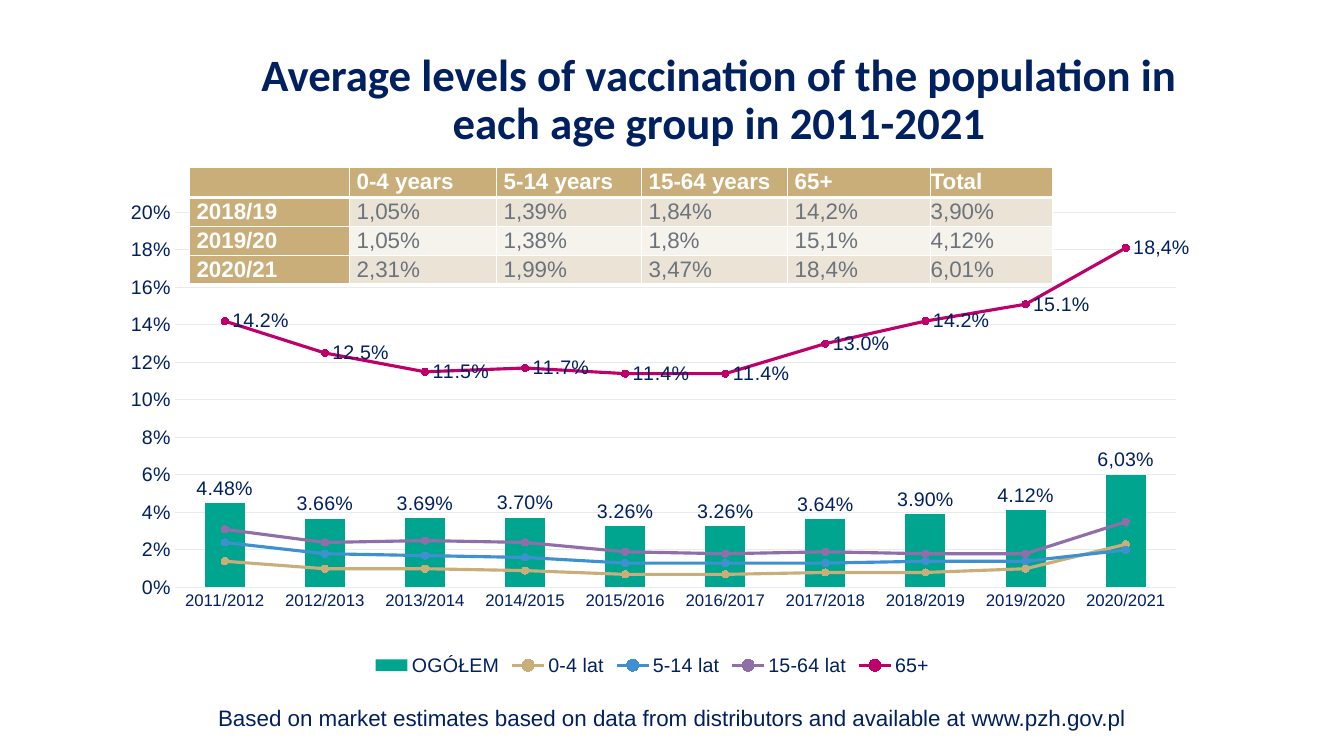
from lxml import etree
from pptx import Presentation
from pptx.chart.data import CategoryChartData
from pptx.dml.color import RGBColor
from pptx.enum.chart import (XL_CHART_TYPE, XL_LABEL_POSITION, XL_LEGEND_POSITION,
                             XL_MARKER_STYLE, XL_TICK_MARK)
from pptx.enum.text import MSO_ANCHOR, PP_ALIGN
from pptx.oxml import parse_xml
from pptx.oxml.ns import nsdecls, qn
from pptx.util import Inches, Pt

CLUSTERED = XL_CHART_TYPE.COLUMN_CLUSTERED
ABOVE, RIGHT = XL_LABEL_POSITION.OUTSIDE_END, XL_LABEL_POSITION.RIGHT
BOTTOM = XL_LEGEND_POSITION.BOTTOM
CIRCLE = XL_MARKER_STYLE.CIRCLE
NO_TICK = XL_TICK_MARK.NONE
TOP, MIDDLE = MSO_ANCHOR.TOP, MSO_ANCHOR.MIDDLE
LEFT, CENTER = PP_ALIGN.LEFT, PP_ALIGN.CENTER

NAVY, GREY, WHITE, PALE = "002060", "6B747B", "FFFFFF", "E9EAEB"
SAND, SAND_LIGHT, SAND_LIGHTER = "CAAE7A", "ECE3D7", "F6F2EC"

YEARS = [f"{year}/{year + 1}" for year in range(2011, 2021)]
COVERAGE = [
    ("OGÓŁEM", "00A590", (0.0448, 0.0366, 0.0369, 0.037, 0.0326, 0.0326, 0.0364, 0.039, 0.0412, 0.0601)),
    ("0-4 lat", SAND, (0.014, 0.01, 0.01, 0.009, 0.007, 0.007, 0.008, 0.008, 0.01, 0.023)),
    ("5-14 lat", "3E90D0", (0.024, 0.018, 0.017, 0.016, 0.013, 0.013, 0.013, 0.014, 0.014, 0.02)),
    ("15-64 lat", "8F6EAA", (0.031, 0.024, 0.025, 0.024, 0.019, 0.018, 0.019, 0.018, 0.018, 0.035)),
    ("65+", "BE006B", (0.142, 0.125, 0.115, 0.117, 0.114, 0.114, 0.13, 0.142, 0.151, 0.181)),
]
SEASONS = [
    ("", "0-4 years", "5-14 years", "15-64 years", "65+", "Total"),
    ("2018/19", "1,05%", "1,39%", "1,84%", "14,2%", "3,90%"),
    ("2019/20", "1,05%", "1,38%", "1,8%", "15,1%", "4,12%"),
    ("2020/21", "2,31%", "1,99%", "3,47%", "18,4%", "6,01%"),
]
COLUMN_WIDTHS = (1.59, 1.46, 1.44, 1.45, 1.42, 1.21)


def color(value):
    return RGBColor.from_string(value)


def set_attributes(target, values):
    for name, value in values.items():
        setattr(target, name, value)


def set_font(font, size, shade=NAVY, name="Arial", bold=False):
    set_attributes(font, {"size": Pt(size), "name": name, "bold": bold})
    font.color.rgb = color(shade)


def set_line(line, shade, width):
    line.color.rgb = color(shade)
    line.width = Pt(width)


def add_border(cell, side, width):
    properties = cell._tc.get_or_add_tcPr()
    properties.append(parse_xml(
        f'<a:ln{side} {nsdecls("a")} w="{Pt(width)}"><a:solidFill>'
        f'<a:srgbClr val="{WHITE}"/></a:solidFill></a:ln{side}>'))


def split_lines(chart):
    """Move every series after the first into a line plot on the same axes."""
    columns = chart.plots[0]._element
    lines = parse_xml(f'<c:lineChart {nsdecls("c")}><c:grouping val="standard"/>'
                      '<c:varyColors val="0"/></c:lineChart>')
    for series in columns.findall(qn("c:ser"))[1:]:
        for setting in series.findall(qn("c:invertIfNegative")):
            series.remove(setting)
        lines.append(series)
    etree.SubElement(lines, qn("c:marker")).set("val", "1")
    for axis in columns.findall(qn("c:axId")):
        etree.SubElement(lines, qn("c:axId")).set("val", axis.get("val"))
    columns.addnext(lines)


def set_plot_layout(chart, **shares):
    area = chart.plots[0]._element.getparent()
    for layout in area.findall(qn("c:layout")):
        area.remove(layout)
    modes = "".join(f'<c:{side}Mode val="edge"/>' for side in "xy")
    sizes = "".join(f'<c:{side} val="{share}"/>' for side, share in shares.items())
    area.insert(0, parse_xml(
        f'<c:layout {nsdecls("c")}><c:manualLayout><c:layoutTarget val="inner"/>'
        f'{modes}{sizes}</c:manualLayout></c:layout>'))


def label_series(series, number_format, position, last_label):
    labels = series.data_labels
    set_attributes(labels, {"show_value": True, "number_format": number_format,
                            "number_format_is_linked": False, "position": position})
    set_font(labels.font, 14)
    last = series.points[len(YEARS) - 1].data_label
    run = last.text_frame.paragraphs[0].add_run()
    run.text = last_label
    set_font(run.font, 14)
    last.position = position


class SlideBuilder:
    """Places elements on one slide; boxes are percentages of the slide's size."""

    def __init__(self):
        self.presentation = Presentation()
        self.presentation.slide_width = Inches(13.33)
        self.presentation.slide_height = Inches(7.5)
        self.slide = self.presentation.slides.add_slide(self.presentation.slide_layouts[6])

    def box(self, *percentages):
        sides = (self.presentation.slide_width, self.presentation.slide_height) * 2
        return [round(side * share / 100) for side, share in zip(sides, percentages)]

    def text(self, box, words, size, spacing=1.0, anchor=TOP, margin=0.05, **font):
        frame = self.slide.shapes.add_textbox(*self.box(*box)).text_frame
        set_attributes(frame, {"word_wrap": True, "vertical_anchor": anchor,
                               "margin_left": Inches(2 * margin), "margin_right": Inches(2 * margin),
                               "margin_top": Inches(margin), "margin_bottom": Inches(margin)})
        paragraph = frame.paragraphs[0]
        set_attributes(paragraph, {"alignment": CENTER, "line_spacing": spacing})
        run = paragraph.add_run()
        run.text = words
        set_font(run.font, size, **font)

    def chart(self, box):
        data = CategoryChartData(number_format="0.0%")
        data.categories = YEARS
        for name, _, values in COVERAGE:
            data.add_series(name, values)
        chart = self.slide.shapes.add_chart(CLUSTERED, *self.box(*box), data).chart
        set_font(chart.font, 16, GREY)
        chart.has_title = False
        chart.has_legend = True
        set_attributes(chart.legend, {"position": BOTTOM, "include_in_layout": False})
        set_font(chart.legend.font, 14)
        split_lines(chart)
        set_plot_layout(chart, x=0.083, y=0.137, w=0.874, h=0.692)
        self.style_axes(chart.category_axis, chart.value_axis)
        columns, lines = chart.plots
        set_attributes(columns, {"gap_width": 150, "vary_by_categories": False})
        total = columns.series[0]
        total.format.fill.solid()
        total.format.fill.fore_color.rgb = color(COVERAGE[0][1])
        label_series(total, "0.00%", ABOVE, "6,03%")
        for series, (_, shade, _) in zip(lines.series, COVERAGE[1:]):
            series.smooth = False
            set_line(series.format.line, shade, 2.25)
            set_attributes(series.marker, {"style": CIRCLE, "size": 5})
            series.marker.format.fill.solid()
            series.marker.format.fill.fore_color.rgb = color(shade)
            set_line(series.marker.format.line, shade, 0.75)
        label_series(lines.series[len(COVERAGE) - 2], "0.0%", RIGHT, "18,4%")

    def style_axes(self, category_axis, value_axis):
        for axis, size in ((category_axis, 12), (value_axis, 14)):
            set_attributes(axis, {"major_tick_mark": NO_TICK, "minor_tick_mark": NO_TICK})
            set_font(axis.tick_labels.font, size)
        set_line(category_axis.format.line, PALE, 0.75)
        set_attributes(value_axis, {"minimum_scale": 0, "maximum_scale": 0.2, "major_unit": 0.02,
                                    "has_major_gridlines": True})
        set_attributes(value_axis.tick_labels, {"number_format": "0%", "number_format_is_linked": False})
        value_axis.format.line.fill.background()
        set_line(value_axis.major_gridlines.format.line, PALE, 0.75)

    def table(self, box, rows, widths):
        left, top, width, height = self.box(*box)
        table = self.slide.shapes.add_table(len(rows), len(widths), left, top, width, height).table
        for column, share in zip(table.columns, widths):
            column.width = round(width * share / sum(widths))
        for row_index, row in enumerate(rows):
            band = SAND_LIGHT if row_index % 2 else SAND_LIGHTER
            for column_index, words in enumerate(row):
                heading = row_index == 0 or column_index == 0
                margin = Inches(0 if column_index == len(row) - 1 else 0.07)
                cell = table.cell(row_index, column_index)
                set_attributes(cell, {"margin_left": margin, "margin_right": margin,
                                      "margin_top": 0, "margin_bottom": 0})
                for side in "LRTB":
                    add_border(cell, side, 3 if side == "B" and row_index == 0 else 1)
                cell.fill.solid()
                cell.fill.fore_color.rgb = color(SAND if heading else band)
                paragraph = cell.text_frame.paragraphs[0]
                set_attributes(paragraph, {"alignment": LEFT, "line_spacing": 1.07})
                run = paragraph.add_run()
                run.text = words
                set_font(run.font, 16, WHITE if heading else GREY, bold=heading)


def main():
    builder = SlideBuilder()
    builder.text((15.9, 5.07, 75.24, 16.53),
                 "Average levels of vaccination of the population in each age group in 2011-2021",
                 32, spacing=0.9, anchor=MIDDLE, margin=0, name="Calibri", bold=True)
    builder.text((2.55, 92.53, 94.9, 4.93),
                 "Based on market estimates based on data from distributors and available at www.pzh.gov.pl", 16)
    builder.chart((5.93, 18.27, 85.22, 71.73))
    builder.table((14.1, 22.13, 64.22, 15.2), SEASONS, COLUMN_WIDTHS)
    builder.presentation.save("out.pptx")


if __name__ == "__main__":
    main()
